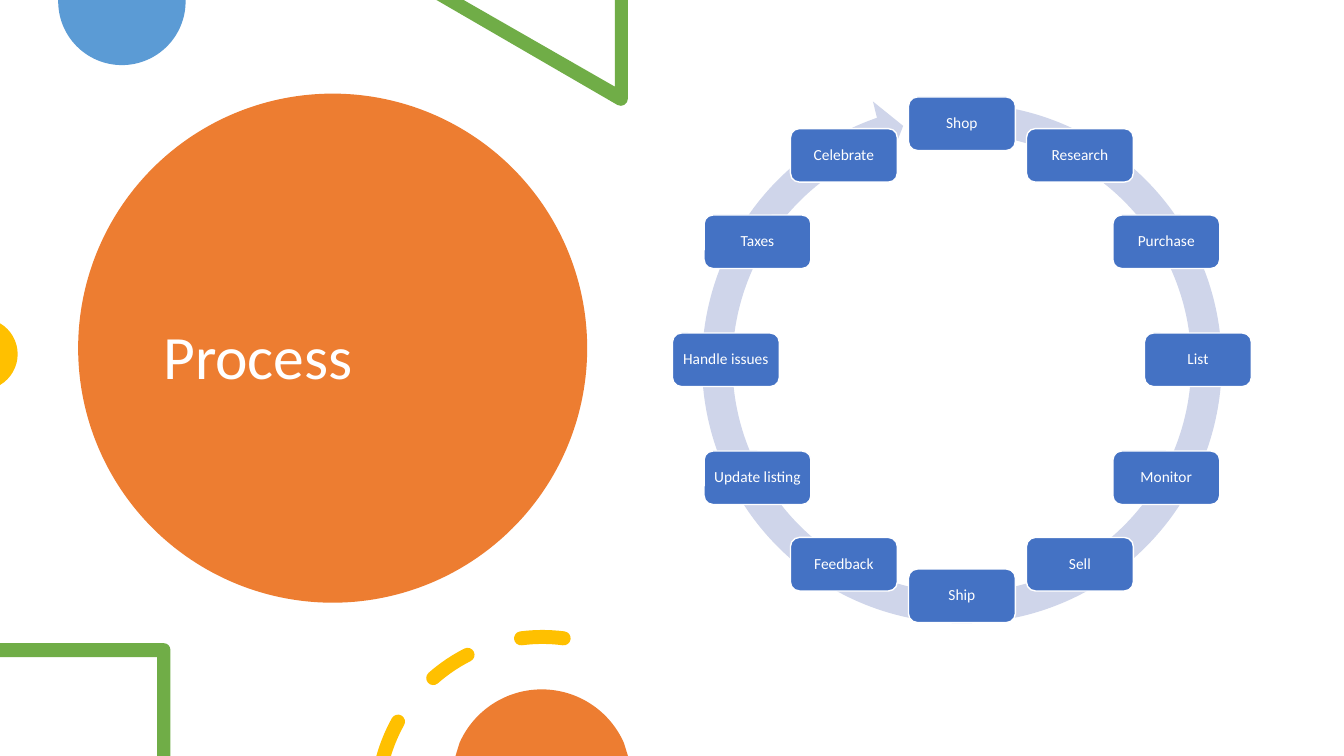
import math
from typing import NamedTuple

import pptx
import pptx.dml.color
import pptx.enum.shapes
import pptx.enum.text
import pptx.oxml
import pptx.oxml.ns
import pptx.util

Pt = pptx.util.Pt
SHAPE = pptx.enum.shapes.MSO_SHAPE
ALIGN = pptx.enum.text.PP_ALIGN
Point = tuple[float, float]
Segment = tuple[Point, ...]
Contour = list[Segment]

COLORS = {
    "orange": "ED7D31",
    "sky": "5B9BD5",
    "green": "70AD47",
    "yellow": "FFC000",
    "blue": "4472C4",
    "ring": "CFD5EA",
    "white": "FFFFFF",
}
STEPS = [
    "Shop", "Research", "Purchase", "List", "Monitor", "Sell",
    "Ship", "Feedback", "Update listing", "Handle issues", "Taxes", "Celebrate",
]
CYCLE_CENTER = (687.1, 257)
CYCLE_RADIUS = 168.6
STEP_WIDTH, STEP_HEIGHT = 76.3, 38.2
RING_ADJUSTMENTS = (0.055, 3.307, 150.368, 166.569, 0.058)
DASH_CENTER = (387.4, 573.1)
DASH_RADIUS, DASH_HALF = 118.1, 5


class Dash(NamedTuple):
    outer_start: float
    inner_start: float
    end: float


class Decoration(NamedTuple):
    color: str
    contours: list[Contour]


def rgb(name: str) -> pptx.dml.color.RGBColor:
    return pptx.dml.color.RGBColor.from_string(COLORS[name])


def polar(center: Point, radius: float, angle: float) -> Point:
    a = math.radians(angle)
    return center[0] + radius * math.cos(a), center[1] + radius * math.sin(a)


def lines(*points: Point) -> Contour:
    return [(point,) for point in points]


def arc(center: Point, radius: float, start: float, end: float) -> Contour:
    count = math.ceil(abs(end - start) / 95)
    step = (end - start) / count
    pull = 4 / 3 * math.tan(math.radians(step) / 4)
    reach = radius * math.hypot(1, pull)
    lean = math.degrees(math.atan(pull))
    contour = lines(polar(center, radius, start))
    for i in range(count):
        a, b = start + i * step, start + (i + 1) * step
        contour.append((polar(center, reach, a + lean),
                        polar(center, reach, b - lean),
                        polar(center, radius, b)))
    return contour


def cap(angle: float, turn: float) -> Contour:
    tip = polar(DASH_CENTER, DASH_RADIUS, angle)
    return arc(tip, DASH_HALF, angle + turn, angle + turn + 180)[1:]


def dash_outline(dash: Dash) -> Contour:
    outer = arc(DASH_CENTER, DASH_RADIUS + DASH_HALF, dash.outer_start, dash.end)
    inner = arc(DASH_CENTER, DASH_RADIUS - DASH_HALF, dash.end, dash.inner_start)
    outline = outer + cap(dash.end, 0) + inner[1:]
    if dash.outer_start == dash.inner_start:
        outline += cap(dash.outer_start, 180)
    return outline


def paint(sp, color: str) -> None:
    sp.shadow.inherit = False
    sp.fill.solid()
    sp.fill.fore_color.rgb = rgb(color)
    sp.line.fill.background()


def add_preset(s, kind, x: float, y: float, w: float, h: float, color: str):
    sp = s.shapes.add_shape(kind, Pt(x), Pt(y), Pt(w), Pt(h))
    paint(sp, color)
    return sp


def bend(sp, contours: list[Contour]) -> None:
    straight = iter(list(sp._element.iter(pptx.oxml.ns.qn("a:lnTo"))))
    for contour in contours:
        for segment in contour[1:]:
            steps = [next(straight) for _ in segment]
            if len(steps) == 3:
                curve = pptx.oxml.parse_xml(
                    f"<a:cubicBezTo {pptx.oxml.ns.nsdecls('a')}/>")
                steps[0].addprevious(curve)
                for step in steps:
                    curve.append(step[0])
                    step.getparent().remove(step)


def add_decoration(s, decoration: Decoration) -> None:
    outlines = [[(Pt(x), Pt(y)) for segment in contour for x, y in segment]
                for contour in decoration.contours]
    builder = s.shapes.build_freeform(*outlines[0][0])
    builder.add_line_segments(outlines[0][1:])
    for outline in outlines[1:]:
        builder.move_to(*outline[0])
        builder.add_line_segments(outline[1:])
    sp = builder.convert_to_shape()
    bend(sp, decoration.contours)
    paint(sp, decoration.color)


def set_text(sp, text: str, size: float, align) -> None:
    tf = sp.text_frame
    tf.text = text
    tf.word_wrap = True
    tf.auto_size = pptx.enum.text.MSO_AUTO_SIZE.NONE
    tf.vertical_anchor = pptx.enum.text.MSO_ANCHOR.MIDDLE
    p = tf.paragraphs[0]
    p.alignment = align
    p.line_spacing = 0.9
    r = p.runs[0]
    r.font.size = Pt(size)
    r.font.name = "Calibri"
    r.font.color.rgb = rgb("white")


def add_title(s) -> None:
    circle = add_preset(s, SHAPE.OVAL, 55.8, 66.9, 363.6, 363.6, "orange")
    title = s.shapes.title
    title._element.addprevious(circle._element)
    title.left, title.top, title.width, title.height = map(Pt, (109.4, 96.8, 254.9, 320.4))
    set_text(title, "Process", 44, ALIGN.LEFT)


def add_step(s, text: str, index: int) -> None:
    x, y = polar(CYCLE_CENTER, CYCLE_RADIUS, 360 * index / len(STEPS) - 90)
    sp = add_preset(s, SHAPE.ROUNDED_RECTANGLE, x - STEP_WIDTH / 2, y - STEP_HEIGHT / 2,
                    STEP_WIDTH, STEP_HEIGHT, "blue")
    sp.line.color.rgb = rgb("white")
    sp.line.width = Pt(1)
    tf = sp.text_frame
    tf.margin_left = tf.margin_right = tf.margin_top = tf.margin_bottom = Pt(3.6)
    set_text(sp, text, 11, ALIGN.CENTER)


def add_cycle(s) -> None:
    ring = add_preset(s, SHAPE.CIRCULAR_ARROW, 489.4, 61.9, 395.3, 395.3, "ring")
    for i, value in enumerate(RING_ADJUSTMENTS):
        ring.adjustments[i] = value
    for i, text in enumerate(STEPS):
        add_step(s, text, i)


DASHES = [
    Dash(-164.4, -163, -150.8),
    Dash(-131.3, -131.3, -116.9),
    Dash(-97.4, -97.4, -82.6),
]
TRIANGLE = lines((448.5, 0), (439.2, 0), (439.2, 61.9), (331.2, 0), (311.8, 0))
SQUARE = lines((121.7, 540), (112.3, 540), (112.3, 469.4), (0, 469.4), (0, 459.4))
DOME = arc((387, 556.6), 64.2, -156.1, -23.9)
BACKDROP = [
    Decoration("sky", [arc((87.1, 1), 45.5, -1.3, 181.3)]),
    Decoration("green", [TRIANGLE + arc((443.5, 70.6), 5, 120, 0)]),
    Decoration("yellow", [arc((-13, 253), 25.6, -59.5, 59.5)]),
]
FOREGROUND = [
    Decoration("green", [SQUARE + arc((117, 464.1), 4.7, -90, 0)]),
    Decoration("yellow", [dash_outline(d) for d in DASHES]),
    Decoration("orange", [lines((325.4, 540)) + DOME + lines((448.6, 540))]),
]


def main() -> None:
    prs = pptx.Presentation()
    prs.slide_width, prs.slide_height = Pt(960), Pt(540)
    s = prs.slides.add_slide(prs.slide_layouts[5])
    add_title(s)
    for decoration in BACKDROP:
        add_decoration(s, decoration)
    add_cycle(s)
    for decoration in FOREGROUND:
        add_decoration(s, decoration)
    prs.save("out.pptx")


if __name__ == "__main__":
    main()
